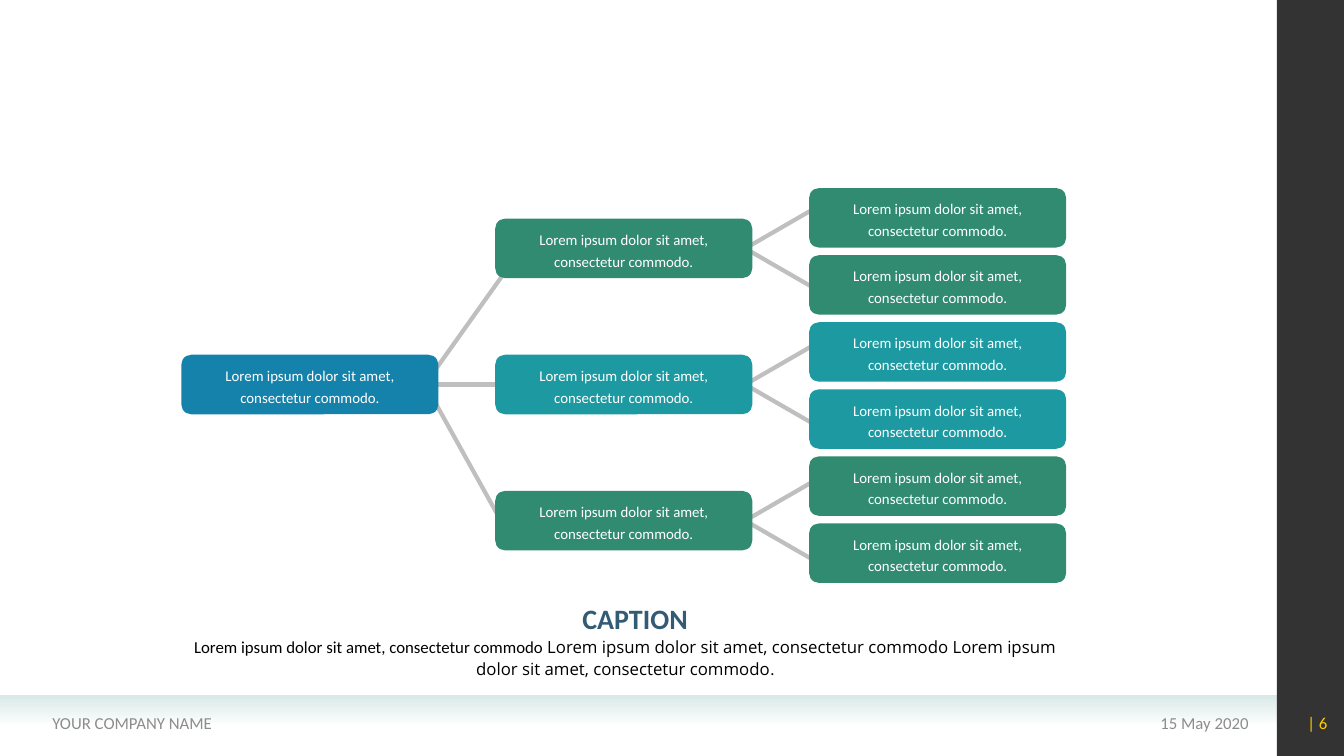
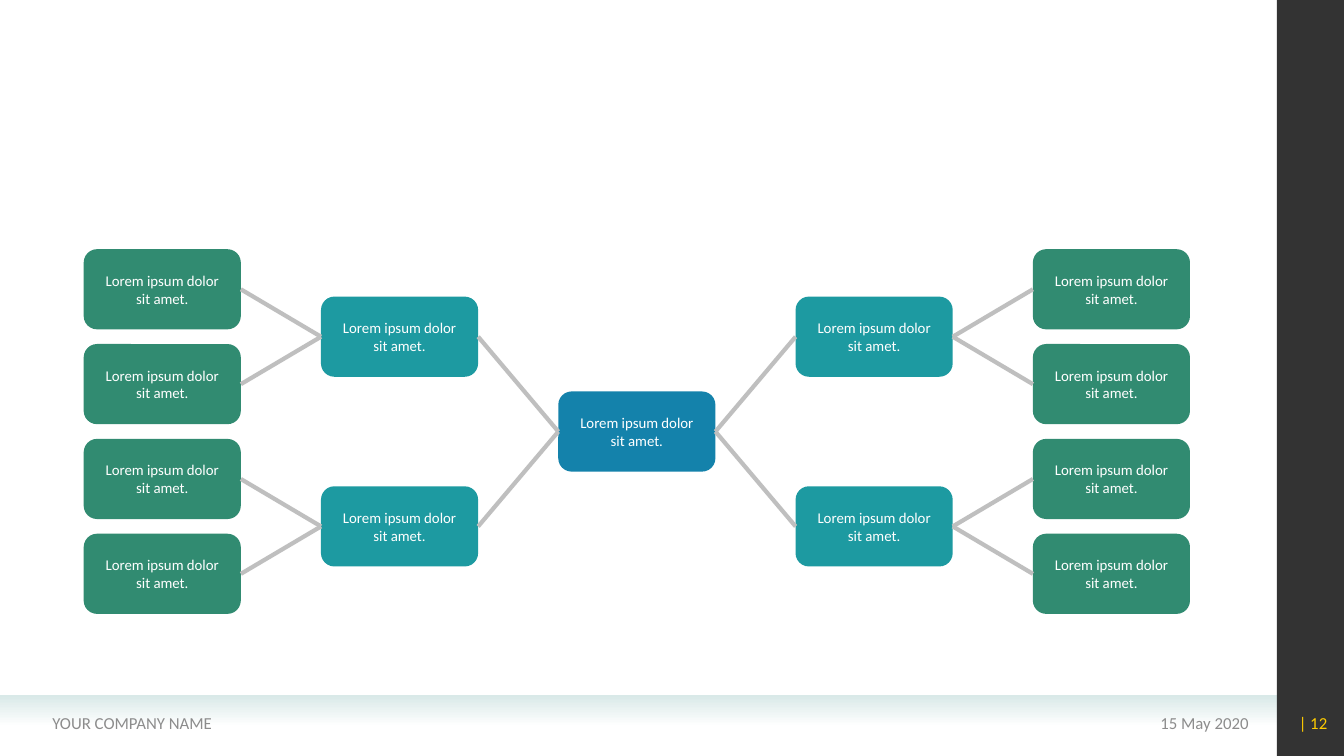
from dataclasses import dataclass

from lxml import etree
from pptx import Presentation
from pptx.dml.color import RGBColor
from pptx.enum.shapes import MSO_CONNECTOR, MSO_SHAPE
from pptx.enum.text import MSO_ANCHOR, PP_ALIGN
from pptx.oxml.ns import qn
from pptx.util import Cm, Pt

RECTANGLE = MSO_SHAPE.RECTANGLE
ROUNDED = MSO_SHAPE.ROUNDED_RECTANGLE
STRAIGHT = MSO_CONNECTOR.STRAIGHT
LEFT, CENTER, RIGHT = PP_ALIGN.LEFT, PP_ALIGN.CENTER, PP_ALIGN.RIGHT
TOP, MIDDLE = MSO_ANCHOR.TOP, MSO_ANCHOR.MIDDLE
LEFT_SITE, RIGHT_SITE = 1, 3  # connection sites of a rounded rectangle

SLIDE_WIDTH, SLIDE_HEIGHT = 33.87, 19.05
BLANK_LAYOUT = 6


@dataclass(frozen=True)
class Theme:
    blue: str = "1482AB"
    teal: str = "1D9AA1"
    green: str = "318B71"
    line: str = "BFBFBF"
    band: str = "D9E9E8"
    side: str = "333333"
    white: str = "FFFFFF"
    black: str = "000000"
    footer: str = "8C8C8C"
    number: str = "FFCC00"
    caption: str = "335B74"
    font: str = "Calibri"
    body_font: str = "Open Sans"
    node_size: float = 10.6
    text_size: float = 12
    caption_size: float = 20
    line_width: float = 3
    leading: float = 15.5
    space_before: float = 2


THEME = Theme()


def add_span(para, text, *, size=THEME.text_size, color=THEME.black,
             font=THEME.font, bold=False):
    span = para.add_run()
    span.text = text
    span.font.size = Pt(size)
    span.font.color.rgb = RGBColor.from_string(color)
    span.font.name = font
    span.font.bold = bold


class Deck:
    """Holds the presentation, its theme and the slide being drawn."""

    def __init__(self, theme):
        self.theme = theme
        self.presentation = Presentation()
        self.presentation.slide_width = Cm(SLIDE_WIDTH)
        self.presentation.slide_height = Cm(SLIDE_HEIGHT)
        self.slide = None

    def add_slide(self, number):
        """Start a slide with the shared band, side bar and footers."""
        theme = self.theme
        layout = self.presentation.slide_layouts[BLANK_LAYOUT]
        self.slide = self.presentation.slides.add_slide(layout)
        side_left = 32.18
        band = self.shape(RECTANGLE, 0, 17.52, side_left, 0.79, theme.band)
        band.fill.gradient()
        band.fill.gradient_angle = 270
        for stop, color in zip(band.fill.gradient_stops, (theme.band, theme.white)):
            stop.color.rgb = RGBColor.from_string(color)
        self.shape(RECTANGLE, side_left, 0, SLIDE_WIDTH - side_left, SLIDE_HEIGHT,
                   theme.side)
        footers = (
            (23.11, 8.61, "15 May 2020", RIGHT, theme.footer),
            (1.07, 12.45, "YOUR COMPANY NAME", LEFT, theme.footer),
            (32.0, 1.7, f"| {number}", RIGHT, theme.number),
        )
        for left, width, text, align, color in footers:
            para = self.text_box(left, 17.7, width, 1.02, align=align, anchor=MIDDLE)
            add_span(para, text, color=color)

    def shape(self, kind, left, top, width, height, color):
        shape = self.slide.shapes.add_shape(
            kind, Cm(left), Cm(top), Cm(width), Cm(height))
        shape.shadow.inherit = False
        shape.fill.solid()
        shape.fill.fore_color.rgb = RGBColor.from_string(color)
        shape.line.fill.background()
        return shape

    def text_box(self, left, top, width, height, align=LEFT, anchor=TOP, wrap=True):
        """Add an empty text box and return its paragraph."""
        box = self.slide.shapes.add_textbox(Cm(left), Cm(top), Cm(width), Cm(height))
        frame = box.text_frame
        frame.word_wrap = wrap
        frame.vertical_anchor = anchor
        para = frame.paragraphs[0]
        para.alignment = align
        return para

    def node(self, left, top, size, color, text, leading=None):
        shape = self.shape(ROUNDED, left, top, *size, color)
        frame = shape.text_frame
        frame.word_wrap = True
        frame.vertical_anchor = MIDDLE
        frame.margin_left = frame.margin_right = Cm(0.4)
        frame.margin_top = frame.margin_bottom = Cm(0.05)
        para = frame.paragraphs[0]
        para.alignment = CENTER
        para.space_before = Pt(self.theme.space_before)
        if leading:
            para.line_spacing = Pt(leading)
        add_span(para, text, size=self.theme.node_size, color=self.theme.white)
        return shape

    def line(self, start=(0, 0), end=(0, 0)):
        line = self.slide.shapes.add_connector(
            STRAIGHT, *(Cm(value) for value in (*start, *end)))
        line.line.color.rgb = RGBColor.from_string(self.theme.line)
        line.line.width = Pt(self.theme.line_width)
        etree.SubElement(line.element.spPr, qn("a:effectLst"))
        return line

    def join(self, left_node, right_node):
        """Glue a line between the facing sides of two nodes."""
        line = self.line()
        line.begin_connect(left_node, RIGHT_SITE)
        line.end_connect(right_node, LEFT_SITE)


def draw_tree(deck):
    """One root, three branches and two leaves on each branch."""
    theme = deck.theme
    deck.add_slide(6)
    text = "Lorem ipsum dolor sit amet, consectetur commodo."
    size = width, height = 6.48, 1.5
    root_left, branch_left, leaf_left = (4.57 + 7.91 * column for column in range(3))
    branch_tops = [5.51 + 3.43 * row for row in range(3)]
    leaf_tops = [4.74 + 1.69 * row for row in range(6)]
    branch_colors = (theme.green, theme.teal, theme.green)

    root_links = (
        ((10.77, 9.6), (12.85, 6.68)),
        ((11.05, 9.69), (12.48, 9.69)),
        ((10.95, 10.11), (12.7, 13.26)),
    )
    for start, end in root_links:
        deck.line(start, end)
    for top in branch_tops:
        middle = top + height / 2
        for side in (-1, 1):
            deck.line((branch_left + width - 0.04, middle + side * 0.08),
                      (leaf_left + 0.02, middle + side * 0.94))

    deck.node(root_left, branch_tops[1], size, theme.blue, text, theme.leading)
    for top, color in zip(branch_tops, branch_colors):
        deck.node(branch_left, top, size, color, text, theme.leading)
    for row, top in enumerate(leaf_tops):
        deck.node(leaf_left, top, size, branch_colors[row // 2], text, theme.leading)

    caption = deck.text_box(14.33, 15.04, 3.35, 1.12, align=CENTER, wrap=False)
    add_span(caption, "CAPTION", size=theme.caption_size, color=theme.caption, bold=True)
    body = deck.text_box(4.24, 15.88, 23.04, 1.42, align=CENTER)
    body.line_spacing = Pt(theme.leading)
    body.space_before = Pt(theme.space_before)
    phrase = "Lorem ipsum dolor sit amet, consectetur commodo"
    add_span(body, f"{phrase} ")
    add_span(body, f"{phrase} {phrase}", font=theme.body_font)
    add_span(body, ".")


def draw_two_sided_map(deck):
    """A centre with two branches and four leaves on each side."""
    theme = deck.theme
    deck.add_slide(12)
    text = "Lorem ipsum dolor sit amet."
    size = 3.96, 2.02
    step = 2.39
    columns = [2.11 + 5.98 * column for column in range(5)]
    leaf_tops = [6.28 + step * row for row in range(4)]
    branch_tops = [top + step / 2 for top in leaf_tops[::2]]
    center_top = sum(branch_tops) / 2

    def add_column(column, tops, color):
        return [deck.node(columns[column], top, size, color, text) for top in tops]

    center = add_column(2, [center_top], theme.blue)[0]
    left_branches = add_column(1, branch_tops, theme.teal)
    right_branches = add_column(3, branch_tops, theme.teal)
    left_leaves = add_column(0, leaf_tops, theme.green)
    right_leaves = add_column(4, leaf_tops, theme.green)

    for left_branch, right_branch in zip(left_branches, right_branches):
        deck.join(left_branch, center)
        deck.join(center, right_branch)
    for row, (left_leaf, right_leaf) in enumerate(zip(left_leaves, right_leaves)):
        deck.join(left_leaf, left_branches[row // 2])
        deck.join(right_branches[row // 2], right_leaf)


def main():
    deck = Deck(THEME)
    draw_tree(deck)
    draw_two_sided_map(deck)
    deck.presentation.save("out.pptx")


if __name__ == "__main__":
    main()
